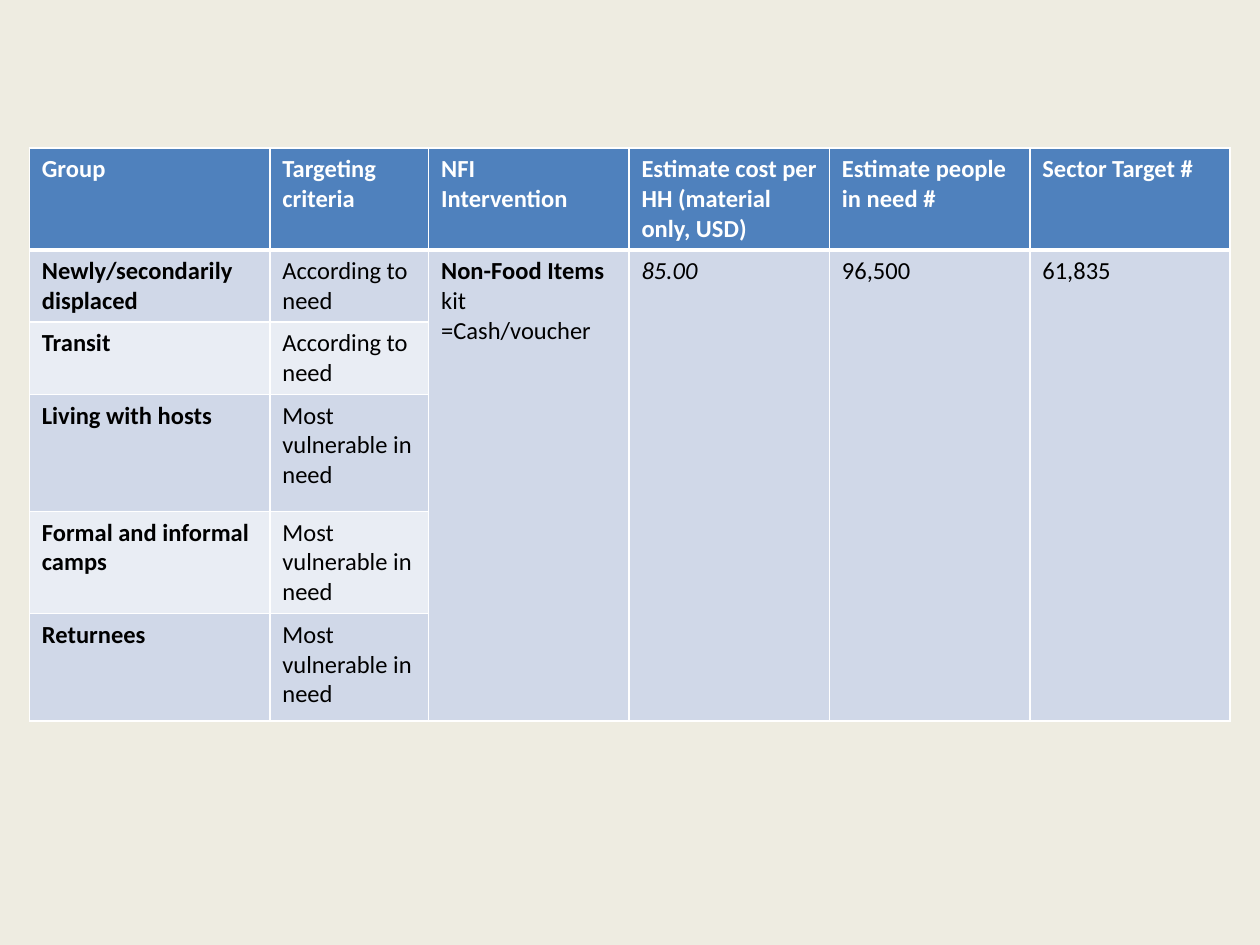
from dataclasses import dataclass

from lxml.etree import SubElement
from pptx import Presentation
from pptx.dml.color import RGBColor
from pptx.oxml.ns import qn
from pptx.util import Cm, Pt


@dataclass(frozen=True)
class Theme:
    background: str = "EEECE1"
    header: str = "4F81BD"
    odd_row: str = "D0D8E8"
    even_row: str = "E9EDF4"
    border: str = "FFFFFF"
    header_text: str = "FFFFFF"
    body_text: str = "000000"
    font: str = "Calibri"
    size: int = 14


theme = Theme()


def add_border(cell, side, width):
    tcPr = cell._tc.get_or_add_tcPr()
    ln = SubElement(tcPr, qn(f"a:{side}"), w=str(Pt(width)))
    fill = SubElement(ln, qn("a:solidFill"))
    SubElement(fill, qn("a:srgbClr"), val=theme.border)


headers = [
    "Group",
    "Targeting criteria",
    "NFI\nIntervention",
    "Estimate cost per HH (material only, USD)",
    "Estimate people in need #",
    "Sector Target #",
]
groups = [
    ("Newly/secondarily displaced", "According to need"),
    ("Transit", "According to need"),
    ("Living with hosts", "Most vulnerable in need"),
    ("Formal and informal camps", "Most vulnerable in need"),
    ("Returnees", "Most vulnerable in need"),
]
shared = ["kit\n=Cash/voucher", "85.00", "96,500", "61,835"]
rows = [headers, [*groups[0], *shared], *groups[1:]]
col_widths = [4.85, 3.2] + [4.04] * 4
row_heights = [1.91, 1.35, 1.42, 2.36, 1.93, 2.16]

prs = Presentation()
prs.slide_width, prs.slide_height = Cm(25.4), Cm(19.05)
s = prs.slides.add_slide(prs.slide_layouts[6])
s.background.fill.solid()
s.background.fill.fore_color.rgb = RGBColor.from_string(theme.background)

table = s.shapes.add_table(
    len(rows), len(headers), Cm(0.59), Cm(2.98),
    Cm(sum(col_widths)), Cm(sum(row_heights)),
).table
for column, width in zip(table.columns, col_widths):
    column.width = Cm(width)
for row, height in zip(table.rows, row_heights):
    row.height = Cm(height)
for col in range(2, len(headers)):
    table.cell(1, col).merge(table.cell(len(rows) - 1, col))

for row in range(len(rows)):
    for col in range(len(headers)):
        cell = table.cell(row, col)
        add_border(cell, "lnL", 1)
        add_border(cell, "lnR", 1)
        add_border(cell, "lnT", 3 if row == 1 else 1)
        add_border(cell, "lnB", 3 if row == 0 else 1)
        band = theme.odd_row if row % 2 else theme.even_row
        cell.fill.solid()
        cell.fill.fore_color.rgb = RGBColor.from_string(theme.header if row == 0 else band)
        if cell.is_spanned:
            continue
        cell.text = rows[row][col]
        color = theme.header_text if row == 0 else theme.body_text
        for p in cell.text_frame.paragraphs:
            p.font.name = theme.font
            p.font.size = Pt(theme.size)
            p.font.bold = row == 0 or col == 0
            p.font.color.rgb = RGBColor.from_string(color)

p = table.cell(1, 2).text_frame.paragraphs[0]
p.runs[0].text = "Non-Food Items "
p.runs[0].font.bold = True
r = p.add_run()
r.text = "kit"
table.cell(1, 3).text_frame.paragraphs[0].font.italic = True

prs.save("out.pptx")
